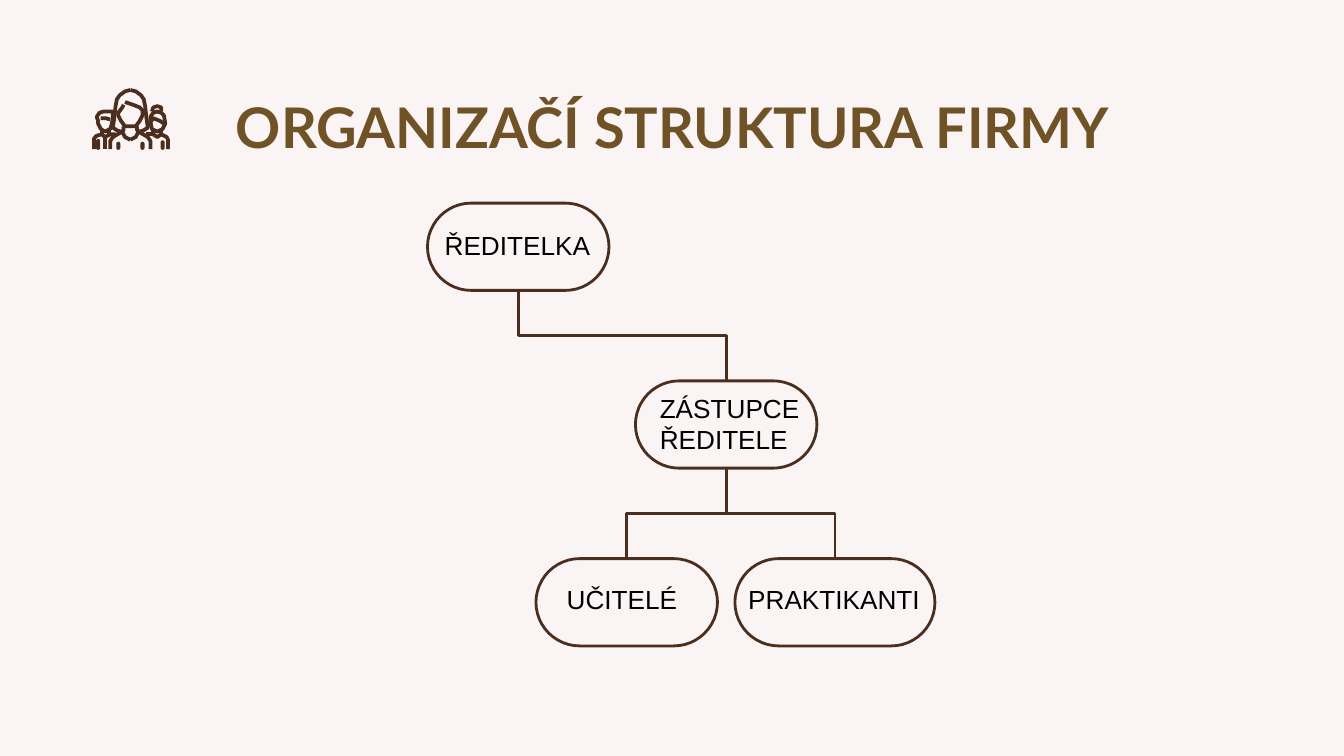
"""Build an organisation chart slide with a title and a small people icon."""
from dataclasses import dataclass

from lxml import etree
from pptx import Presentation
from pptx.dml.color import RGBColor
from pptx.enum.shapes import MSO_CONNECTOR, MSO_SHAPE
from pptx.enum.text import MSO_ANCHOR, MSO_AUTO_SIZE, PP_ALIGN
from pptx.oxml.ns import qn
from pptx.shapes.autoshape import Shape
from pptx.shapes.shapetree import SlideShapes
from pptx.text.text import TextFrame
from pptx.util import Cm, Length, Pt

ELBOW = MSO_CONNECTOR.ELBOW
ROUNDED = MSO_SHAPE.ROUNDED_RECTANGLE
TOP = MSO_ANCHOR.TOP
FIXED, GROW = MSO_AUTO_SIZE.NONE, MSO_AUTO_SIZE.SHAPE_TO_FIT_TEXT
LEFT, CENTER = PP_ALIGN.LEFT, PP_ALIGN.CENTER
TOP_SITE, BOTTOM_SITE = 0, 2

Point = tuple[float, float]
Stroke = list[Point]


@dataclass(frozen=True)
class Theme:
    """Colours, fonts and sizes of the slide."""
    background: RGBColor = RGBColor(0xFA, 0xF4, 0xF4)
    title: RGBColor = RGBColor(0x70, 0x52, 0x27)
    outline: RGBColor = RGBColor(0x4B, 0x2E, 0x1E)
    text: RGBColor = RGBColor(0, 0, 0)
    title_font: str = "Lato"
    label_font: str = "Arial"
    title_size: Length = Pt(30)
    label_size: Length = Pt(14)
    line: Length = Pt(1.5)
    icon_line: Length = Pt(2)
    tick_line: Length = Pt(0.75)


@dataclass(frozen=True)
class Role:
    """A role in the company: its box and its label, in centimetres."""
    name: str
    row: int
    left: float
    width: float
    label_left: float
    label_drop: float
    label_width: float
    label_height: float = 0.86
    align: PP_ALIGN = LEFT


THEME = Theme()
FIRST_ROW, ROW_STEP, BOX_HEIGHT = 3.84, 3.36, 1.65
ICON_UNIT = 0.0254
ICON_AXIS = 97

DIRECTOR = Role("ŘEDITELKA", 0, 8.08, 3.43, 8, 0.38, 3.56, align=CENTER)
DEPUTY = Role("ZÁSTUPCE ŘEDITELE", 1, 12.01, 3.43, 12.22, 0.09, 4.14, 1.45)
TEACHERS = Role("UČITELÉ", 2, 10.13, 3.43, 10.46, 0.34, 2.77)
TRAINEES = Role("PRAKTIKANTI", 2, 13.89, 3.78, 13.89, 0.34, 3.78)
ROLES = [DIRECTOR, DEPUTY, TEACHERS, TRAINEES]
LINKS = [(DIRECTOR, DEPUTY), (DEPUTY, TRAINEES), (TEACHERS, DEPUTY)]

HALF_HAIR: Stroke = [(97, 67), (93, 68), (89, 71), (87, 74), (85.5, 79), (85, 88),
                     (84.5, 95), (87, 97), (90.5, 98.5), (92.5, 97), (92.5, 93.5)]
HALF_SHOULDER: Stroke = [(82, 111), (82, 105), (83.5, 101.5), (91, 98.5),
                         (93, 102), (97, 104)]
FACE: Stroke = [(92, 78.5), (91, 80.5), (88, 83.5), (88, 86), (89.5, 90), (93, 93.5),
                (97, 94), (101, 93.5), (104.5, 90), (106, 86), (106, 82.5),
                (104, 80.5), (99, 77.5), (93, 76)]
LEFT_PERSON: list[Stroke] = [
    [(84, 83), (77, 83), (74, 84), (72, 87), (73, 90), (73, 92), (75, 96),
     (78, 97.5), (81.5, 96), (83, 93), (83.5, 88), (84, 83)],
    [(70, 111), (70, 103), (71.5, 101), (75.5, 99.5), (78.5, 102), (82, 99.5), (86, 100)],
    [(75.5, 97), (75.5, 99.5)],
    [(81, 97), (81, 99.5)],
    [(78.5, 102), (78.5, 111)],
]
RIGHT_PERSON: list[Stroke] = [
    [(117, 83), (114, 84), (112, 87), (111.5, 91), (113, 96), (117, 98), (121, 96),
     (123, 92), (122, 86), (120, 84), (117, 83)],
    [(113, 83), (114, 80), (117, 79), (120, 80), (120.5, 83)],
    [(112.5, 91), (114.5, 88), (119, 90), (122, 92.5)],
    [(109, 100), (113.5, 99.5), (113.5, 97)],
    [(113.5, 100), (117, 102), (119.5, 99.5), (124, 102), (125, 104), (125, 111)],
    [(119.5, 97), (119.5, 99.5)],
]
FRINGE: Stroke = [(75, 87.5), (79, 88), (82, 89)]
TICKS = [(87, 106), (105, 106), (72, 104), (120, 105)]
TICK_FOOT, TICK_WIDTH = 111, 2


def mirrored(stroke: Stroke) -> Stroke:
    """Reflect a stroke across the middle of the icon."""
    return [(2 * ICON_AXIS - x, y) for x, y in stroke]


def write(frame: TextFrame, text: str, *, font: str, size: Length, color: RGBColor,
          bold: bool = False, align: PP_ALIGN = LEFT, fit: MSO_AUTO_SIZE = GROW) -> None:
    """Put one formatted paragraph into a text frame."""
    frame.word_wrap = True
    frame.auto_size = fit
    frame.vertical_anchor = TOP
    para = frame.paragraphs[0]
    para.alignment = align
    span = para.add_run()
    span.text = text
    span.font.name, span.font.size, span.font.bold = font, size, bold
    span.font.color.rgb = color


def outline(shape: Shape, width: Length, filled: bool = False) -> None:
    """Give a shape the outline colour, with or without fill."""
    shape.shadow.inherit = False
    if filled:
        shape.fill.solid()
        shape.fill.fore_color.rgb = THEME.outline
    else:
        shape.fill.background()
    shape.line.color.rgb = THEME.outline
    shape.line.width = width


def draw_title(shapes: SlideShapes, text: str) -> None:
    """Place and fill the title placeholder."""
    title = shapes.title
    title.left, title.top, title.width, title.height = Cm(2.01), Cm(1.5), Cm(21.41), Cm(1.6)
    frame = title.text_frame
    frame.margin_left = frame.margin_right = Cm(0.25)
    frame.margin_top = frame.margin_bottom = Cm(0.25)
    write(frame, text, font=THEME.title_font, size=THEME.title_size,
          color=THEME.title, bold=True, align=CENTER, fit=FIXED)


def draw_box(shapes: SlideShapes, role: Role) -> Shape:
    """Draw the rounded box of a role."""
    top = FIRST_ROW + role.row * ROW_STEP
    box = shapes.add_shape(ROUNDED, Cm(role.left), Cm(top), Cm(role.width), Cm(BOX_HEIGHT))
    box.adjustments[0] = 0.5
    outline(box, THEME.line)
    return box


def draw_label(shapes: SlideShapes, role: Role) -> None:
    """Write the name of a role over its box."""
    top = FIRST_ROW + role.row * ROW_STEP + role.label_drop
    label = shapes.add_textbox(Cm(role.label_left), Cm(top),
                               Cm(role.label_width), Cm(role.label_height))
    write(label.text_frame, role.name, font=THEME.label_font, size=THEME.label_size,
          color=THEME.text, align=role.align)


def draw_link(shapes: SlideShapes, first: Shape, second: Shape) -> None:
    """Join a box to one on its right with a vertical-horizontal-vertical elbow."""
    descends = first.top < second.top
    upper, lower = (first, second) if descends else (second, first)
    start_x, end_x = (box.left + box.width // 2 for box in (first, second))
    start_y, end_y = upper.top + upper.height, lower.top
    across, down = end_x - start_x, end_y - start_y
    link = shapes.add_connector(ELBOW, 0, 0, 0, 0)
    link.begin_connect(first, BOTTOM_SITE if descends else TOP_SITE)
    link.end_connect(second, TOP_SITE if descends else BOTTOM_SITE)
    link.left = (start_x + end_x - down) // 2
    link.top = (start_y + end_y - across) // 2
    link.width, link.height = down, across
    properties = link._element.spPr
    frame = properties.find(qn("a:xfrm"))
    frame.set("rot", "16200000")
    frame.set("flipH", str(int(descends)))
    frame.set("flipV", "0")
    link.line.color.rgb = THEME.outline
    link.line.width = THEME.line
    etree.SubElement(properties, qn("a:effectLst"))


def draw_strokes(shapes: SlideShapes, strokes: list[Stroke]) -> None:
    """Draw open strokes as one outline."""
    builder = shapes.build_freeform(*strokes[0][0], scale=Cm(ICON_UNIT))
    for stroke in strokes:
        builder.move_to(*stroke[0])
        builder.add_line_segments(stroke[1:], close=False)
    outline(builder.convert_to_shape(), THEME.icon_line)


def draw_icon(shapes: SlideShapes) -> None:
    """Draw three people side by side."""
    halves = [HALF_HAIR, HALF_SHOULDER]
    people = halves + [mirrored(half) for half in halves] + [FACE]
    draw_strokes(shapes, people + LEFT_PERSON + RIGHT_PERSON)
    draw_strokes(shapes, [FRINGE])
    for left, top in TICKS:
        sizes = (left, top, TICK_WIDTH, TICK_FOOT - top)
        tick = shapes.add_shape(ROUNDED, *(Cm(size * ICON_UNIT) for size in sizes))
        tick.adjustments[0] = 0.5
        outline(tick, THEME.tick_line, filled=True)


def main() -> None:
    """Build and save the deck."""
    deck = Presentation()
    deck.slide_width, deck.slide_height = Cm(25.4), Cm(14.29)
    page = deck.slides.add_slide(deck.slide_layouts[5])
    page.background.fill.solid()
    page.background.fill.fore_color.rgb = THEME.background
    draw_title(page.shapes, "ORGANIZAČÍ STRUKTURA FIRMY")
    boxes = {role: draw_box(page.shapes, role) for role in ROLES}
    for first, second in LINKS:
        draw_link(page.shapes, boxes[first], boxes[second])
    draw_icon(page.shapes)
    for role in ROLES:
        draw_label(page.shapes, role)
    deck.save("out.pptx")


if __name__ == "__main__":
    main()
